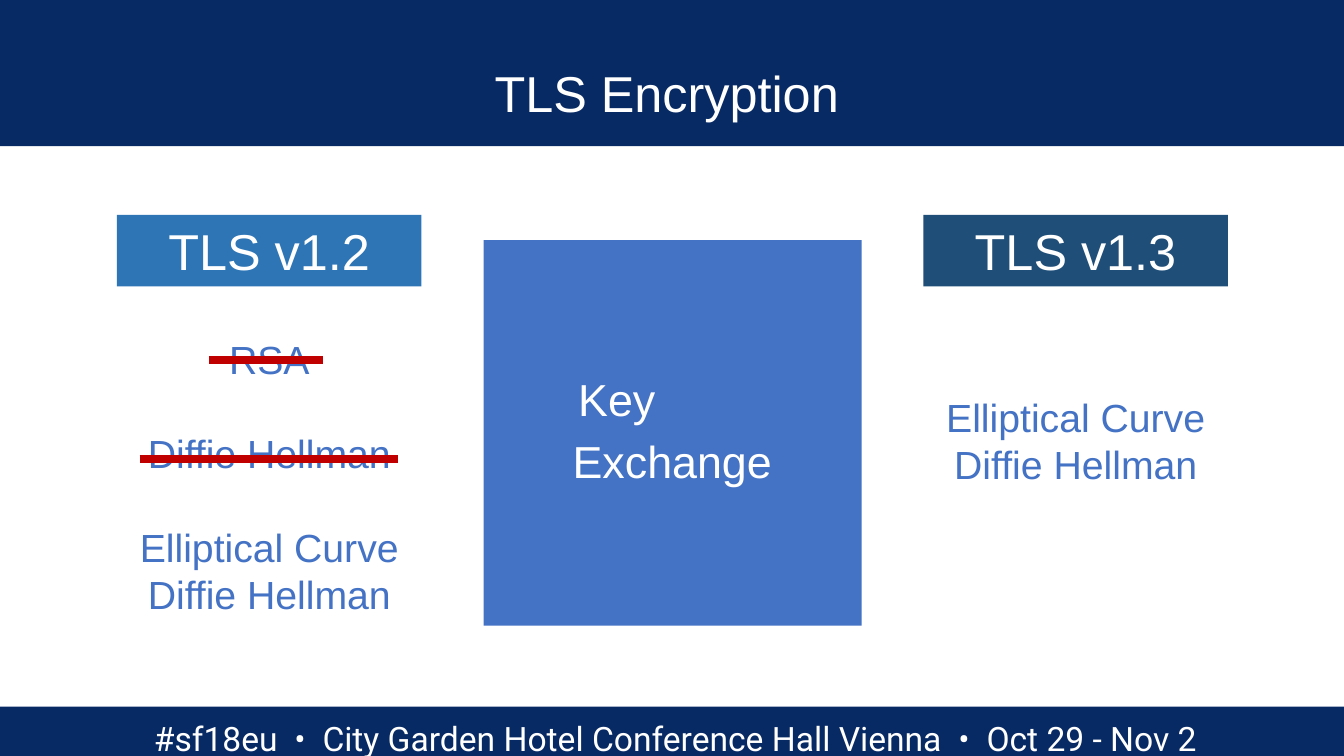
import pptx
import pptx.dml.color
import pptx.enum.shapes
import pptx.enum.text
import pptx.oxml.ns
import pptx.util
from lxml import etree

Pt = pptx.util.Pt
Align = pptx.enum.text.PP_ALIGN
Anchor = pptx.enum.text.MSO_ANCHOR

NAVY, BLUE, WHITE, RED = "082A64", "4472C4", "FFFFFF", "C00000"


def paint(color_owner, color):
    """Give a fill or a font a solid hex colour."""
    if hasattr(color_owner, "solid"):
        color_owner.solid()
        color_owner = color_owner.fore_color
    else:
        color_owner = color_owner.color
    color_owner.rgb = pptx.dml.color.RGBColor.from_string(color)


def write(paragraph, text, size=28, color=BLUE, font="Arial", align=Align.CENTER,
          before=0, spacing=None, tracking=0, indent=0):
    """Add one run of text and format its paragraph."""
    props = paragraph._p.get_or_add_pPr()
    props.set("marL", str(Pt(indent)))
    props.set("indent", "0")
    bullet_tag = pptx.oxml.ns.qn("a:buNone")
    if props.find(bullet_tag) is None:
        etree.SubElement(props, bullet_tag)
    paragraph.alignment = align
    paragraph.space_before = Pt(before)
    if spacing:
        paragraph.line_spacing = spacing
    run = paragraph.add_run()
    run.text = text
    run.font.size, run.font.name = Pt(size), font
    paint(run.font, color)
    if tracking:
        run._r.get_or_add_rPr().set("spc", str(tracking * 100))


class Deck:
    """Holds the slide and the shared style."""

    def __init__(self):
        self.presentation = pptx.Presentation()
        self.presentation.slide_width = Pt(960)
        self.presentation.slide_height = Pt(540)
        self.slide = self.presentation.slides.add_slide(
            self.presentation.slide_layouts[1])
        self.shapes = self.slide.shapes

    def frame(self, shape, insets=(7.2, 3.6, 7.2, 3.6), anchor=Anchor.TOP):
        text = shape.text_frame
        text.word_wrap = True
        text.auto_size = pptx.enum.text.MSO_AUTO_SIZE.NONE
        text.vertical_anchor = anchor
        (text.margin_left, text.margin_top,
         text.margin_right, text.margin_bottom) = map(Pt, insets)
        return text

    def placeholder(self, index, left, top, width, height, insets, anchor):
        holder = self.slide.placeholders[index]
        holder.left, holder.top = Pt(left), Pt(top)
        holder.width, holder.height = Pt(width), Pt(height)
        return holder, self.frame(holder, insets, anchor)

    def block(self, left, top, width, height, color):
        shape = self.shapes.add_shape(pptx.enum.shapes.MSO_SHAPE.RECTANGLE,
                                      Pt(left), Pt(top), Pt(width), Pt(height))
        shape.shadow.inherit = False
        paint(shape.fill, color)
        shape.line.fill.background()
        return shape

    def band(self, top, height):
        """Full-width block behind everything else."""
        shape = self.block(0, top, 960, height, NAVY)
        self.shapes._spTree.insert(2, shape._element)

    def text_box(self, left, top, width, height, insets=(7.2, 3.6, 7.2, 3.6)):
        return self.frame(self.shapes.add_textbox(
            Pt(left), Pt(top), Pt(width), Pt(height)), insets)

    def strike(self, left, right, y):
        line = self.shapes.add_connector(pptx.enum.shapes.MSO_CONNECTOR.STRAIGHT,
                                         Pt(left), Pt(y), Pt(right), Pt(y))
        paint(line.line.fill, RED)
        line.line.width = Pt(6)
        etree.SubElement(line._element.spPr, pptx.oxml.ns.qn("a:effectLst"))


def main():
    deck = Deck()

    # Header and footer
    deck.band(0, 104.4)
    deck.band(504.8, 35.2)
    _, title = deck.placeholder(0, 55.4, 46, 849, 34.6, (0, 3.6, 7.2, 3.6), Anchor.TOP)
    write(title.paragraphs[0], "TLS Encryption", size=36, color=WHITE, spacing=0.9)
    footer = deck.text_box(48.2, 507.6, 868.3, 32.4, (9.4, 5, 9.4, 5)).paragraphs[0]
    facts = ["#sf18eu", "City Garden Hotel Conference Hall Vienna", "Oct 29 - Nov 2"]
    for number, fact in enumerate(facts):
        if number:
            for mark, tracking in ((" ", 6), ("•", 0), (" ", 6)):
                write(footer, mark, size=24, color=WHITE, font="Roboto",
                      tracking=tracking)
        write(footer, fact, size=24, color=WHITE, font="Roboto")

    # Central topic
    topic, topic_text = deck.placeholder(1, 345.4, 171.5, 270, 275.4,
                                         (21.6,) * 4, Anchor.MIDDLE)
    paint(topic.fill, BLUE)
    write(topic_text.paragraphs[0], "Key", size=32, color=WHITE,
          align=Align.LEFT, spacing=0.9, indent=46)
    write(topic_text.add_paragraph(), "Exchange", size=32, color=WHITE,
          align=Align.LEFT, spacing=0.9, before=10, indent=42)

    # Versions with their key exchange methods, one inner list per method
    curve = ["Elliptical Curve", "Diffie Hellman"]
    line_height = 33.6
    versions = [
        ("TLS v1.2", 83.5, "2E75B6", 236.2, [["RSA"], ["Diffie Hellman"], curve]),
        ("TLS v1.3", 659.5, "1F4E79", 277.3, [curve]),
    ]
    for version, left, color, list_top, methods in versions:
        heading = deck.frame(deck.block(left, 153.5, 217.6, 51.1, color))
        write(heading.paragraphs[0], version, size=36, color=WHITE, spacing=Pt(43.5))

        line_count = sum(map(len, methods)) + len(methods) - 1
        listing = deck.text_box(left - 21.8, list_top, 261.2,
                                line_count * line_height + 7.2)
        for method_number, method in enumerate(methods):
            for line_number, line in enumerate(method):
                first_line = method_number == line_number == 0
                opens_method = line_number == 0 and method_number > 0
                paragraph = listing.paragraphs[0] if first_line else listing.add_paragraph()
                write(paragraph, line, spacing=Pt(line_height),
                      before=line_height if opens_method else 0)

    # Methods dropped in v1.3
    deck.strike(149.2, 230.6, 257)
    deck.strike(99.7, 284.3, 327.8)

    deck.presentation.save("out.pptx")


if __name__ == "__main__":
    main()
